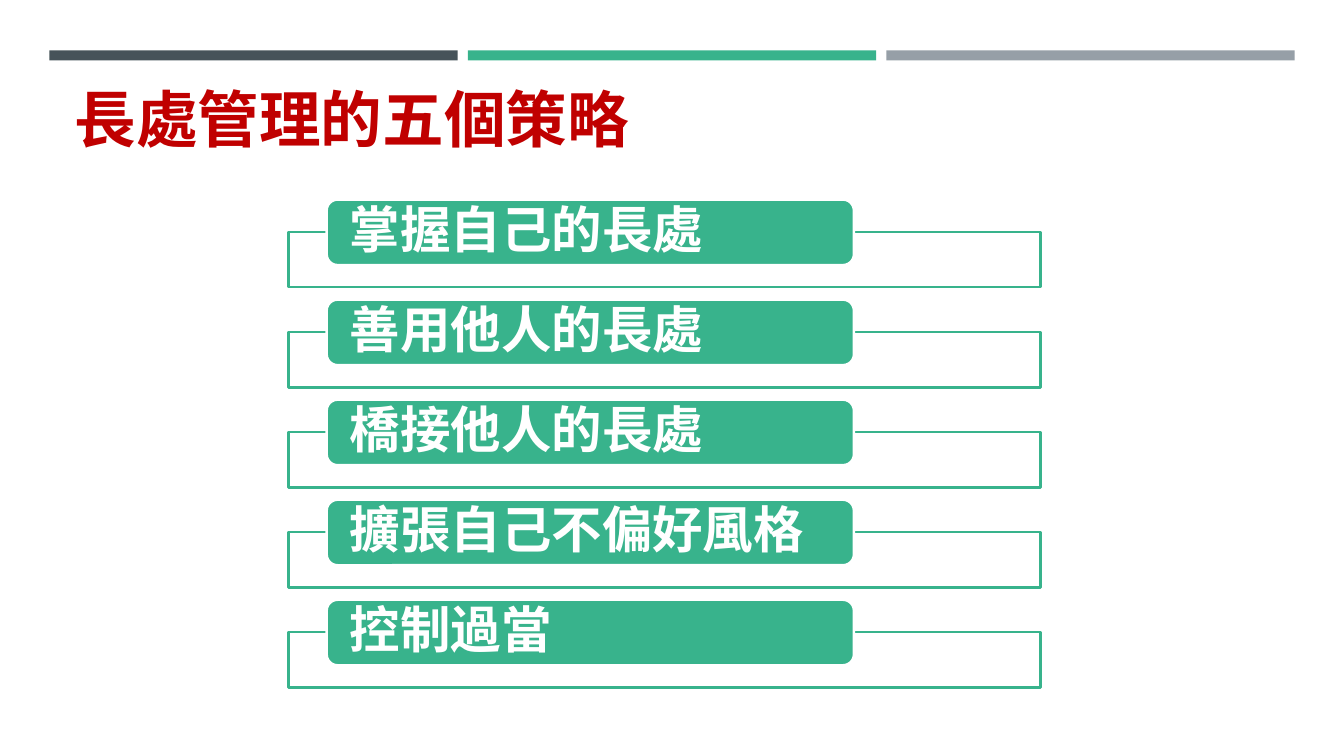
import pptx
import pptx.util
import pptx.dml.color
import pptx.enum.shapes
import pptx.enum.text
import pptx.oxml
import pptx.oxml.ns

Inches = pptx.util.Inches
Pt = pptx.util.Pt
RGBColor = pptx.dml.color.RGBColor
SHAPE = pptx.enum.shapes.MSO_SHAPE
ANCHOR = pptx.enum.text.MSO_ANCHOR

SLATE = RGBColor(0x46, 0x53, 0x59)
GREEN = RGBColor(0x38, 0xB3, 0x8C)
GREY = RGBColor(0x96, 0x9F, 0xA7)
RED = RGBColor(0xC0, 0x00, 0x00)
WHITE = RGBColor(0xFF, 0xFF, 0xFF)

BAR_LEFT, BAR_STEP, BAR_WIDTH = 0.49, 4.15, 4.05
FIRST_ROW, ROW_STEP = 1.98, 0.9925
STRATEGIES = ["掌握自己的長處", "善用他人的長處", "橋接他人的長處",
              "擴張自己不偏好風格", "控制過當"]

deck = pptx.Presentation()
deck.slide_width, deck.slide_height = Inches(13.33), Inches(7.5)
page = deck.slides.add_slide(deck.slide_layouts[6])


def add_block(kind, left, top, width, height, fill, line=None):
    block = page.shapes.add_shape(
        kind, Inches(left), Inches(top), Inches(width), Inches(height))
    block.shadow.inherit = False
    block.fill.solid()
    block.fill.fore_color.rgb = fill
    if line is None:
        block.line.fill.background()
    else:
        block.line.color.rgb = line
        block.line.width = Pt(1.75)
    return block


def write_bold(frame, text, size, color, latin):
    """Write one bold left-aligned line, with a CJK face for its characters."""
    frame.word_wrap = True
    para = frame.paragraphs[0]
    para.alignment = pptx.enum.text.PP_ALIGN.LEFT
    para.line_spacing = 0.9
    span = para.add_run()
    span.text = text
    span.font.name = latin
    span.font.size = Pt(size)
    span.font.bold = True
    span.font.color.rgb = color
    east_asian = pptx.oxml.parse_xml(
        f'<a:ea {pptx.oxml.ns.nsdecls("a")} typeface="Noto Sans CJK SC"/>')
    span.font._element.append(east_asian)


for column, color in enumerate([SLATE, GREEN, GREY]):
    add_block(SHAPE.RECTANGLE, BAR_LEFT + column * BAR_STEP, 0.5,
              BAR_WIDTH, 0.1, color)

title = page.shapes.add_textbox(
    Inches(0.64), Inches(0.7), Inches(12.06), Inches(0.89))
title.text_frame.vertical_anchor = ANCHOR.BOTTOM
write_bold(title.text_frame, "長處管理的五個策略", 44, RED, "Roboto Condensed")

for row, strategy in enumerate(STRATEGIES):
    top = FIRST_ROW + row * ROW_STEP
    add_block(SHAPE.RECTANGLE, 2.86, top + 0.32, 7.46, 0.55, WHITE, GREEN)
    label = add_block(SHAPE.ROUNDED_RECTANGLE, 3.24, top, 5.23, 0.65,
                      GREEN, WHITE)
    frame = label.text_frame
    frame.margin_left = frame.margin_right = Inches(0.2)
    frame.margin_top = frame.margin_bottom = 0
    frame.vertical_anchor = ANCHOR.MIDDLE
    write_bold(frame, strategy, 36, WHITE, "Noto Sans CJK SC")

deck.save("out.pptx")
